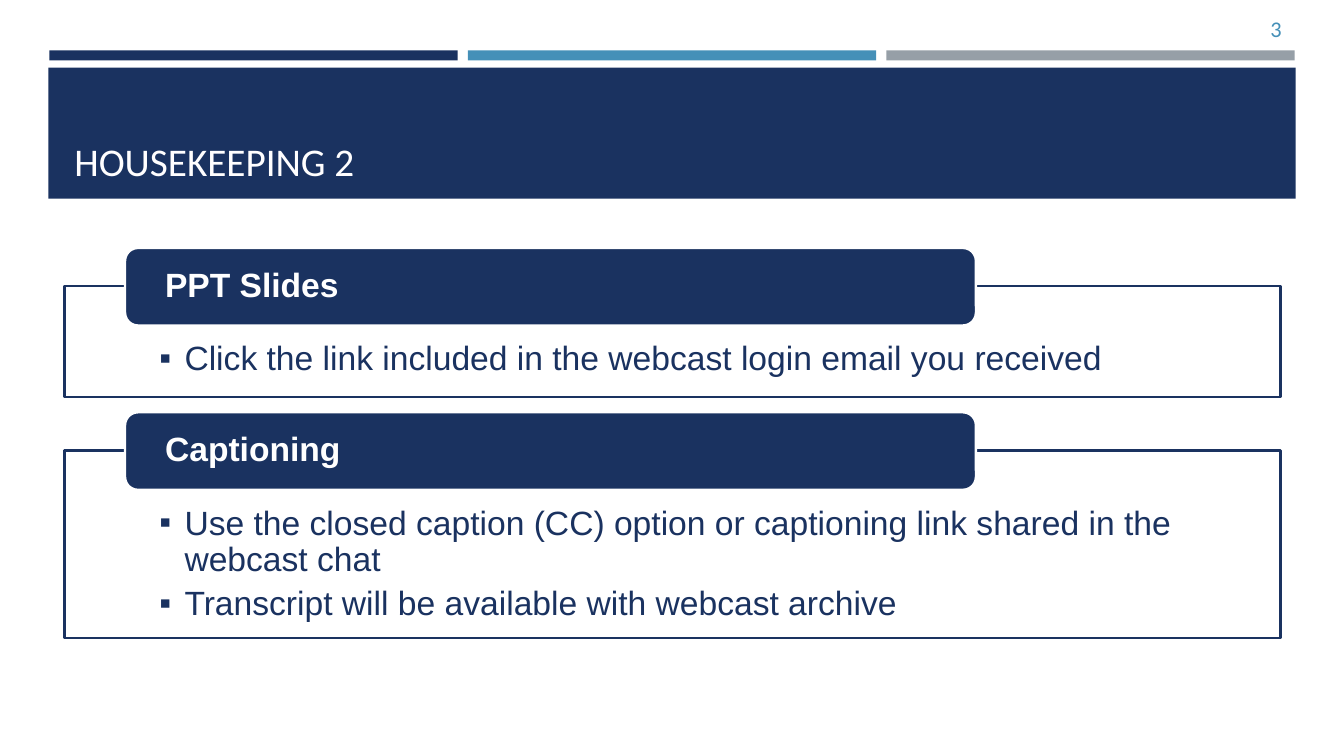
from pptx import Presentation
from pptx.dml.color import RGBColor
from pptx.enum.shapes import MSO_SHAPE
from pptx.enum.text import MSO_ANCHOR, PP_ALIGN
from pptx.oxml.ns import qn
from pptx.util import Inches, Pt
from lxml.etree import SubElement

TITLE = "HOUSEKEEPING 2"
NUMBER = "3"
PANELS = [
    ("PPT Slides", 2.84, 1.1,
     ["Click the link included in the webcast login email you received"]),
    ("Captioning", 4.47, 1.86,
     ["Use the closed caption (CC) option or captioning link shared in the webcast chat",
      "Transcript will be available with webcast archive"]),
]
COLORS = {"navy": "1A3260", "blue": "4590B8", "gray": "969FA7",
          "white": "FFFFFF", "title": "FFFEFF"}
BARS = ["navy", "blue", "gray"]


def color(name):
    """Return the named colour."""
    return RGBColor.from_string(COLORS[name])


def add_box(slide, kind, box, fill, line=None):
    """Add a filled shape with an optional outline."""
    shape = slide.shapes.add_shape(kind, *map(Inches, box))
    shape.shadow.inherit = False
    shape.fill.solid()
    shape.fill.fore_color.rgb = color(fill)
    if line:
        shape.line.color.rgb = color(line)
        shape.line.width = Pt(1.75)
    else:
        shape.line.fill.background()
    return shape


def add_bullet(par):
    """Give a paragraph a square bullet with a hanging indent."""
    props = par._p.get_or_add_pPr()
    props.set("marL", str(Inches(0.25)))
    props.set("indent", str(-Inches(0.25)))
    SubElement(props, qn("a:buFont")).set("typeface", "Arial")
    SubElement(props, qn("a:buChar")).set("char", "▪")


def write(shape, lines, size, font, tint, anchor, pads=(0.1, 0.05, 0.1, 0.05),
          align=PP_ALIGN.LEFT, bold=False, bullet=False, space=0.9, after=0):
    """Fill a shape with evenly styled paragraphs."""
    frame = shape.text_frame
    frame.word_wrap = True
    frame.vertical_anchor = anchor
    (frame.margin_left, frame.margin_top,
     frame.margin_right, frame.margin_bottom) = map(Inches, pads)
    for i, line in enumerate(lines):
        par = frame.add_paragraph() if i else frame.paragraphs[0]
        par.text = line
        par.alignment = align
        par.line_spacing = space
        par.space_after = Pt(after)
        if bullet:
            add_bullet(par)
        par.font.size = Pt(size)
        par.font.name = font
        par.font.bold = bold
        par.font.color.rgb = color(tint)


def add_panel(slide, head, top, height, points):
    """Add an outlined panel with its heading tab."""
    body = add_box(slide, MSO_SHAPE.RECTANGLE, (0.64, top, 12.06, height),
                   "white", "navy")
    write(body, points, 24, "Arial", "navy", MSO_ANCHOR.TOP,
          (0.94, 0.55, 0.94, 0.19), bullet=True, after=6)
    tab = add_box(slide, MSO_SHAPE.ROUNDED_RECTANGLE,
                  (1.24, top - 0.38, 8.44, 0.77), "navy", "white")
    write(tab, [head], 24, "Arial", "white", MSO_ANCHOR.MIDDLE,
          (0.36, 0, 0.36, 0), bold=True)


def main():
    """Build the slide and save it."""
    deck = Presentation()
    deck.slide_width, deck.slide_height = Inches(13.33), Inches(7.5)
    slide = deck.slides.add_slide(deck.slide_layouts[6])
    for i, name in enumerate(BARS):
        add_box(slide, MSO_SHAPE.RECTANGLE, (0.49 + 4.15 * i, 0.5, 4.05, 0.1), name)
    add_box(slide, MSO_SHAPE.RECTANGLE, (0.48, 0.67, 12.37, 1.3), "navy")
    title = slide.shapes.add_textbox(*map(Inches, (0.64, 0.77, 12.06, 1.11)))
    write(title, [TITLE], 28, "Calibri", "title", MSO_ANCHOR.BOTTOM, space=1.0)
    number = slide.shapes.add_textbox(*map(Inches, (11.66, 0.1, 1.15, 0.4)))
    write(number, [NUMBER], 16, "Calibri", "blue", MSO_ANCHOR.MIDDLE,
          align=PP_ALIGN.RIGHT, after=6)
    for panel in PANELS:
        add_panel(slide, *panel)
    deck.save("out.pptx")


if __name__ == "__main__":
    main()
